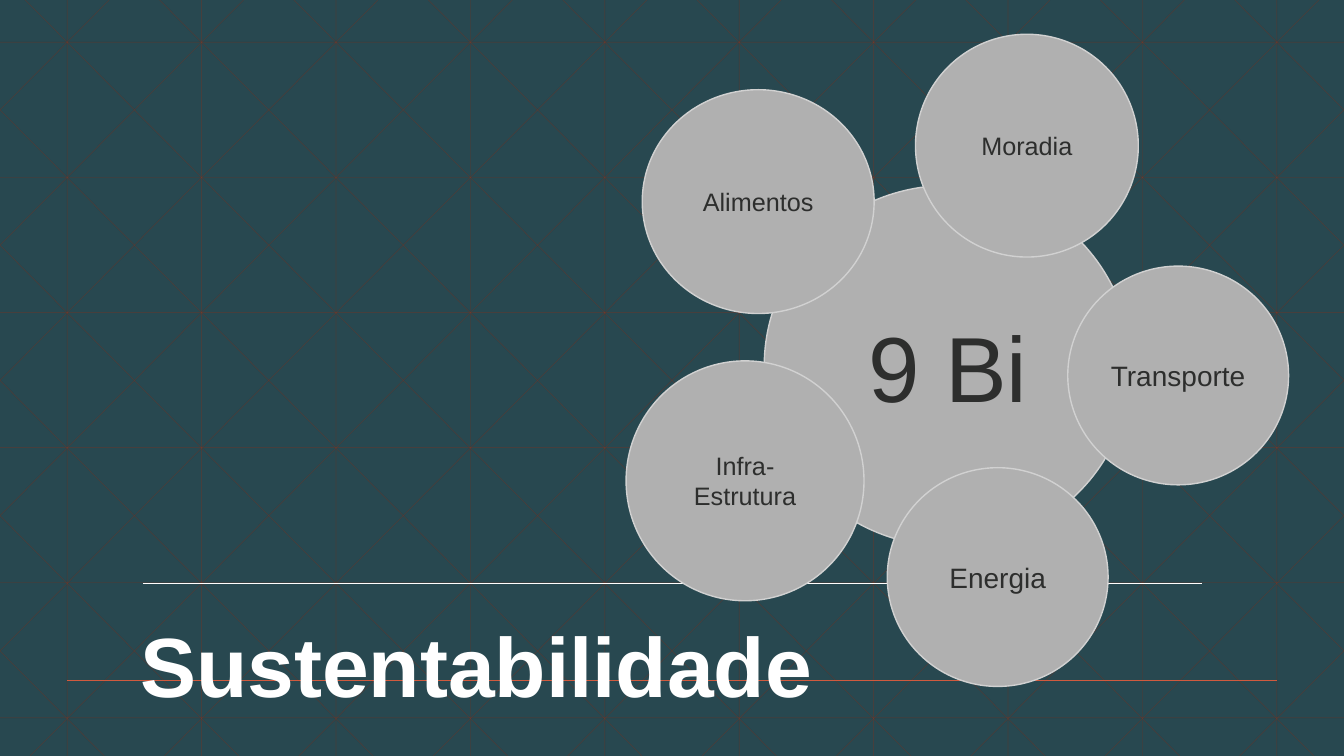
from lxml import etree
from pptx import Presentation
from pptx.dml.color import RGBColor
from pptx.enum.shapes import MSO_CONNECTOR, MSO_SHAPE
from pptx.enum.text import MSO_ANCHOR, MSO_AUTO_SIZE, PP_ALIGN
from pptx.oxml.ns import qn
from pptx.util import Inches, Pt

TEAL = RGBColor(0x28, 0x48, 0x50)
CHARCOAL = RGBColor(0x26, 0x27, 0x26)
RUST = RGBColor(0xA4, 0x3F, 0x27)
ORANGE = RGBColor(0xD1, 0x5A, 0x3E)
WHITE = RGBColor(0xFF, 0xFF, 0xFF)
GRAY = RGBColor(0xB0, 0xB0, 0xB0)
LIGHT_GRAY = RGBColor(0xD1, 0xD1, 0xD1)
INK = RGBColor(0x2D, 0x2E, 0x2D)

WIDTH, HEIGHT = 13.33, 7.5
COLUMN = WIDTH / 10
ROW = 1.34
DIAGONAL_RUN = 7.45  # horizontal reach of a diagonal over the full height


def add_line(shapes, start, end, color, width, opacity=100):
    """Draw a straight line between two points given in inches."""
    line = shapes.add_connector(
        MSO_CONNECTOR.STRAIGHT, *[Inches(value) for value in (*start, *end)])
    line.line.color.rgb = color
    line.line.width = Pt(width)
    properties = line._element.spPr
    if opacity < 100:
        color_element = properties.find(".//" + qn("a:srgbClr"))
        etree.SubElement(color_element, qn("a:alpha")).set("val", str(opacity * 1000))
    etree.SubElement(properties, qn("a:effectLst"))


def add_text(shape, text, size, color, alignment, anchor, bold=False):
    frame = shape.text_frame
    frame.word_wrap = True
    frame.auto_size = MSO_AUTO_SIZE.NONE
    frame.vertical_anchor = anchor
    paragraph = frame.paragraphs[0]
    paragraph.alignment = alignment
    run = paragraph.add_run()
    run.text = text
    run.font.name = "Arial"
    run.font.size = Pt(size)
    run.font.bold = bold
    run.font.color.rgb = color


presentation = Presentation()
presentation.slide_width = Inches(WIDTH)
presentation.slide_height = Inches(HEIGHT)
slide = presentation.slides.add_slide(presentation.slide_layouts[5])
slide.background.fill.solid()
slide.background.fill.fore_color.rgb = TEAL

# Background lattice: columns, rows and both sets of diagonals
lattice = []
for column in range(10):
    x = (column + 0.5) * COLUMN
    lattice.append(((x, 0), (x, HEIGHT)))
for row in range(6):
    y = 0.42 + row * ROW
    lattice.append(((0, y), (WIDTH, y)))
slope = HEIGHT / DIAGONAL_RUN
for step in range(-5, 10):
    top = 0.25 + step * COLUMN
    left, right = max(top, 0), min(top + DIAGONAL_RUN, WIDTH)
    start_y, end_y = (left - top) * slope, (right - top) * slope
    lattice.append(((left, start_y), (right, end_y)))
    lattice.append(((WIDTH - left, start_y), (WIDTH - right, end_y)))

for color in (CHARCOAL, RUST):
    group = slide.shapes.add_group_shape()
    for start, end in lattice:
        add_line(group.shapes, start, end, color, 0.5, opacity=25)

# Rules around the title
add_line(slide.shapes, (COLUMN / 2, HEIGHT * 0.9),
         (WIDTH - COLUMN / 2, HEIGHT * 0.9), ORANGE, 1)
add_line(slide.shapes, (1.42, 5.79), (11.92, 5.79), WHITE, 1)

title = slide.shapes.title
title.left, title.top = Inches(1.29), Inches(5.94)
title.width, title.height = Inches(10.5), Inches(1.2)
add_text(title, "Sustentabilidade", 60, WHITE, PP_ALIGN.LEFT, MSO_ANCHOR.BOTTOM, bold=True)
title.text_frame.paragraphs[0].line_spacing = 0.85
slide.shapes._spTree.append(title._element)  # bring the title in front of the lines

# Hub first, then its satellites: text, size, left, top, width, height
circles = [
    ("9 Bi", 66, 7.58, 1.84, 3.64, 3.58),
    ("Transporte", 20, 10.59, 2.64, 2.19, 2.17),
    ("Alimentos", 18, 6.37, 0.89, 2.3, 2.22),
    ("Moradia", 18, 9.08, 0.34, 2.21, 2.21),
    ("Energia", 20, 8.8, 4.64, 2.19, 2.17),
    ("Infra-Estrutura", 18, 6.21, 3.58, 2.36, 2.38),
]
for text, size, *box in circles:
    circle = slide.shapes.add_shape(MSO_SHAPE.OVAL, *[Inches(value) for value in box])
    circle.shadow.inherit = False
    circle.fill.solid()
    circle.fill.fore_color.rgb = GRAY
    circle.line.color.rgb = LIGHT_GRAY
    circle.line.width = Pt(1)
    add_text(circle, text, size, INK, PP_ALIGN.CENTER, MSO_ANCHOR.MIDDLE)

presentation.save("out.pptx")
